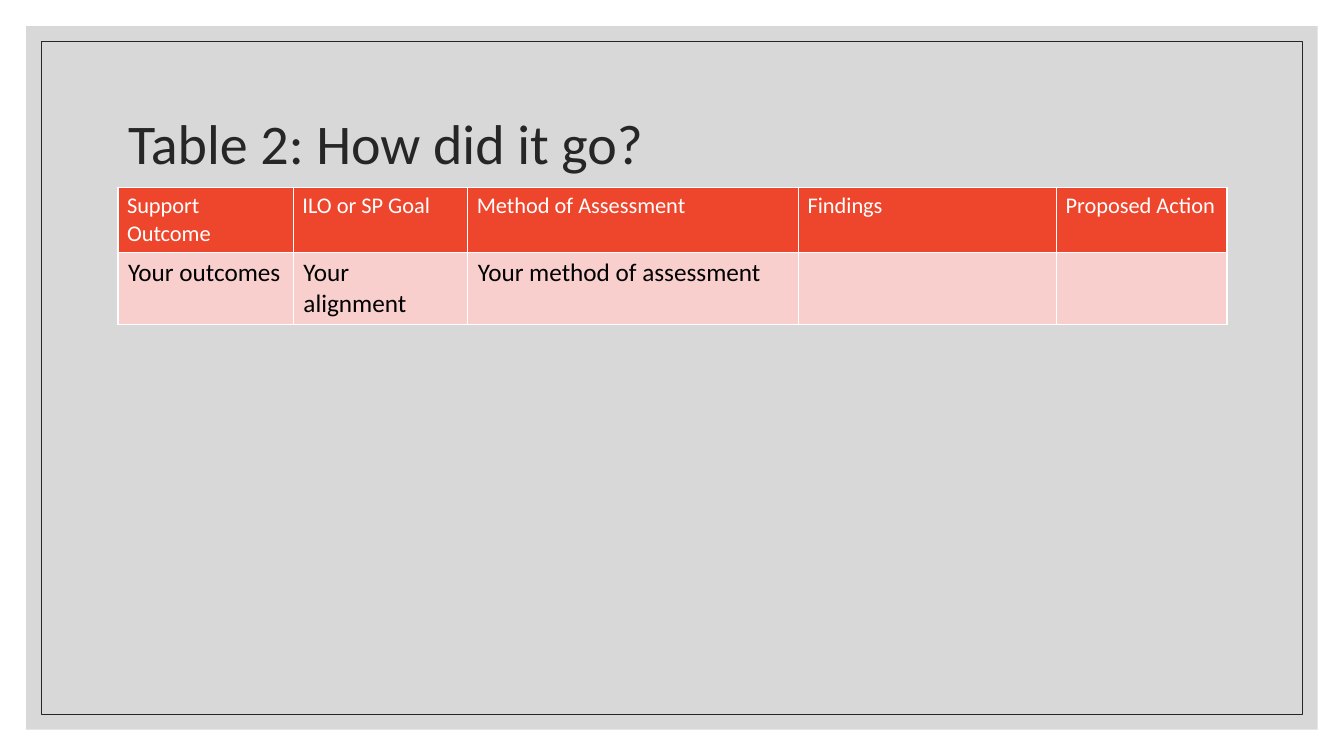
from lxml import etree
from pptx import Presentation
from pptx.dml.color import RGBColor
from pptx.enum.shapes import MSO_SHAPE as Kind
from pptx.enum.text import MSO_ANCHOR as Anchor, PP_ALIGN as Align
from pptx.oxml import parse_xml
from pptx.oxml.ns import nsdecls, qn
from pptx.util import Inches, Pt

WHITE = RGBColor(0xFF, 0xFF, 0xFF)
BLACK = RGBColor(0, 0, 0)
GREY = RGBColor(0xBF, 0xBF, 0xBF)
DARK = RGBColor(0x26, 0x26, 0x26)
RED = RGBColor(0xEE, 0x46, 0x2D)
PINK = RGBColor(0xF8, 0xCF, 0xCD)
FONT = "Calibri"

TITLE = "Table 2: How did it go?"
ROWS = [
    ["Support\nOutcome", "ILO or SP Goal", "Method of Assessment",
     "Findings", "Proposed Action"],
    ["Your outcomes", "Your alignment", "Your method of assessment", "", ""],
]
STYLES = [
    {"fill": RED, "color": WHITE, "size": 16, "side": 0.09, "height": 0.64},
    {"fill": PINK, "color": BLACK, "size": 18, "side": 0.1, "height": 0.72},
]
WIDTHS = [1.74, 1.73, 3.28, 2.56, 1.69]
WIDE, HIGH = 13.33, 7.5
LEFT, TOP = 1.17, 1.86


def style(par, size, color):
    font = par.font
    for name, value in {"name": FONT, "size": Pt(size)}.items():
        setattr(font, name, value)
    font.color.rgb = color


def add_panel(slide, inset):
    """Add a rectangle set in equally from all slide edges."""
    panel = slide.shapes.add_shape(
        Kind.RECTANGLE, Inches(inset), Inches(inset),
        Inches(WIDE - 2 * inset), Inches(HIGH - 2 * inset))
    panel.shadow.inherit = False
    return panel


def add_border(cell):
    """Draw a thin white line on each side of a cell."""
    props = cell._tc.get_or_add_tcPr()
    for place, side in enumerate("LRTB"):
        props.insert(place, parse_xml(
            f'<a:ln{side} {nsdecls("a")} w="{Pt(1)}"><a:solidFill>'
            f'<a:srgbClr val="{WHITE}"/></a:solidFill></a:ln{side}>'))


def add_frame(slide):
    back = add_panel(slide, 0.26)
    back.fill.solid()
    back.fill.fore_color.rgb = GREY
    back.line.fill.background()
    tint = back.element.spPr.find(f"{qn('a:solidFill')}/{qn('a:srgbClr')}")
    etree.SubElement(tint, qn("a:alpha"), val="60000")
    edge = add_panel(slide, 0.41)
    edge.fill.background()
    edge.line.color.rgb = DARK
    edge.line.width = Pt(0.5)


def add_title(slide):
    title = slide.shapes.title
    place = {"left": LEFT, "top": 0.7, "width": sum(WIDTHS), "height": 1.5}
    for name, value in place.items():
        setattr(title, name, Inches(value))
    title.element.getparent().append(title.element)
    frame = title.text_frame
    frame.text = TITLE
    frame.vertical_anchor = Anchor.MIDDLE
    par = frame.paragraphs[0]
    par.alignment = Align.LEFT
    par.line_spacing = 0.9
    style(par, 40, DARK)


def add_grid(slide):
    high = sum(look["height"] for look in STYLES)
    table = slide.shapes.add_table(
        len(ROWS), len(WIDTHS), Inches(LEFT), Inches(TOP),
        Inches(sum(WIDTHS)), Inches(high)).table
    for col, width in zip(table.columns, WIDTHS):
        col.width = Inches(width)
    for row, texts, look in zip(table.rows, ROWS, STYLES):
        row.height = Inches(look["height"])
        for cell, text in zip(row.cells, texts):
            cell.text = text
            cell.margin_left = cell.margin_right = Inches(look["side"])
            cell.fill.solid()
            cell.fill.fore_color.rgb = look["fill"]
            add_border(cell)
            for par in cell.text_frame.paragraphs:
                style(par, look["size"], look["color"])
                par.font.bold = False


def main():
    deck = Presentation()
    deck.slide_width, deck.slide_height = Inches(WIDE), Inches(HIGH)
    slide = deck.slides.add_slide(deck.slide_layouts[5])
    add_frame(slide)
    add_title(slide)
    add_grid(slide)
    deck.save("out.pptx")


if __name__ == "__main__":
    main()
